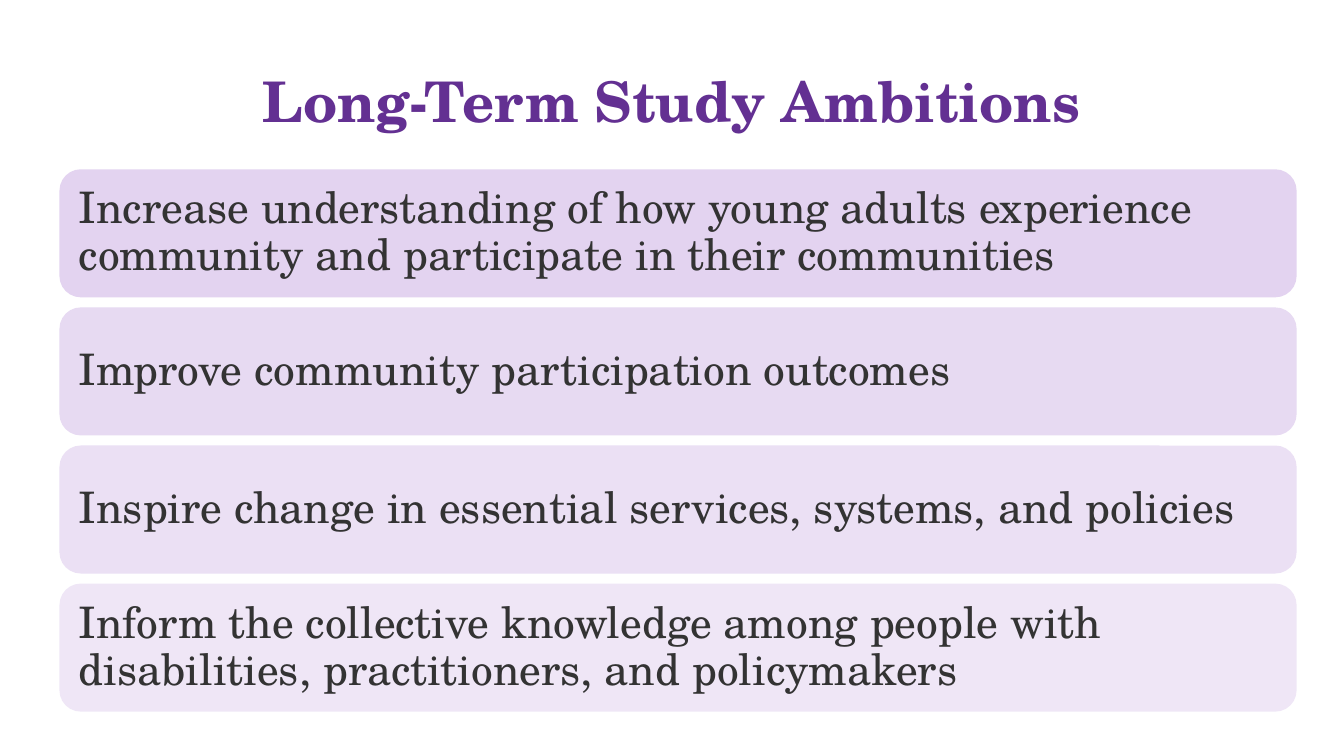
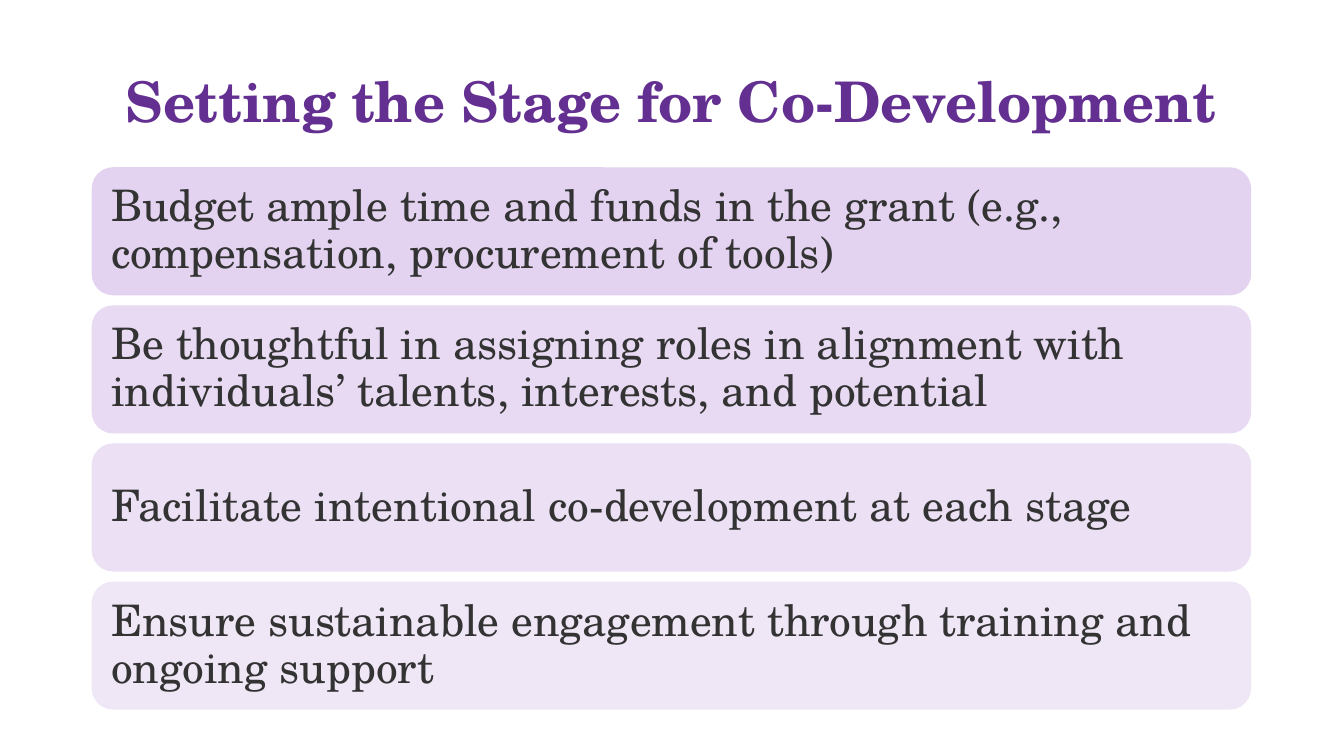
from lxml import etree
from pptx import Presentation
from pptx.dml.color import RGBColor
from pptx.enum.shapes import MSO_SHAPE
from pptx.enum.text import MSO_ANCHOR, PP_ALIGN
from pptx.oxml.ns import qn
from pptx.util import Inches, Pt

ROUNDED = MSO_SHAPE.ROUNDED_RECTANGLE
MIDDLE = MSO_ANCHOR.MIDDLE
CENTER, LEFT = PP_ALIGN.CENTER, PP_ALIGN.LEFT

FONT = "TeX Gyre Schola"
PURPLE, LILAC, CHARCOAL = "633092", "E0CFEF", "333333"
TITLE_FORMAT = {"name": FONT, "size": Pt(40), "bold": True}
PANEL_FORMAT = {"name": FONT, "size": Pt(31), "bold": False}
PANEL_HEIGHT, PANEL_PITCH, PANEL_INSET = 1.27, 1.37, 0.13
FIRST_OPACITY, LAST_OPACITY = 90, 50

SLIDES = [
    {
        "title": "Long-Term Study Ambitions",
        "left": 0.59, "top": 1.68, "width": 12.27,
        "points": [
            "Increase understanding of how young adults experience community and participate in their communities",
            "Improve community participation outcomes",
            "Inspire change in essential services, systems, and policies",
            "Inform the collective knowledge among people with disabilities, practitioners, and policymakers",
        ],
    },
    {
        "title": "Setting the Stage for Co-Development",
        "left": 0.91, "top": 1.66, "width": 11.5,
        "points": [
            "Budget ample time and funds in the grant (e.g., compensation, procurement of tools)",
            "Be thoughtful in assigning roles in alignment with individuals’ talents, interests, and potential",
            "Facilitate intentional co-development at each stage",
            "Ensure sustainable engagement through training and ongoing support",
        ],
    },
]


def rgb(value):
    """Turn a hex string into a colour."""
    return RGBColor.from_string(value)


def write(frame, wording, font_format, color, alignment):
    """Write one vertically centred paragraph into a text frame."""
    frame.word_wrap = True
    frame.vertical_anchor = MIDDLE
    paragraph = frame.paragraphs[0]
    paragraph.alignment = alignment
    paragraph.line_spacing = 0.9
    run = paragraph.add_run()
    run.text = wording
    for attribute, value in font_format.items():
        setattr(run.font, attribute, value)
    run.font.color.rgb = rgb(color)


def fill_translucent(shape, color, opacity):
    """Fill a shape with a colour at an opacity in percent."""
    shape.fill.solid()
    shape.fill.fore_color.rgb = rgb(color)
    color_element = shape.fill._xPr.find(qn("a:solidFill"))[0]
    etree.SubElement(color_element, qn("a:alpha"), val=str(opacity * 1000))


def add_title(slide, wording):
    """Add the centred slide title."""
    title = slide.shapes.add_textbox(Inches(0.91), Inches(0.42), Inches(11.5), Inches(1.24))
    write(title.text_frame, wording, TITLE_FORMAT, PURPLE, CENTER)


def add_panel(slide, left, top, width, wording, opacity):
    """Add a rounded panel holding one point."""
    panel = slide.shapes.add_shape(
        ROUNDED, Inches(left), Inches(top), Inches(width), Inches(PANEL_HEIGHT))
    panel.shadow.inherit = False
    panel.line.fill.background()
    fill_translucent(panel, LILAC, opacity)
    for side in ("left", "top", "right", "bottom"):
        setattr(panel.text_frame, f"margin_{side}", Inches(PANEL_INSET))
    write(panel.text_frame, wording, PANEL_FORMAT, CHARCOAL, LEFT)


def add_panels(slide, left, top, width, points):
    """Stack the points in panels that fade downwards."""
    fade = (FIRST_OPACITY - LAST_OPACITY) / (len(points) - 1)
    for row, point in enumerate(points):
        add_panel(slide, left, top + row * PANEL_PITCH, width, point,
                  round(FIRST_OPACITY - row * fade))


def main():
    """Build and save the presentation."""
    deck = Presentation()
    deck.slide_width, deck.slide_height = Inches(13.33), Inches(7.5)
    blank = deck.slide_layouts[6]
    for content in SLIDES:
        slide = deck.slides.add_slide(blank)
        add_title(slide, content["title"])
        add_panels(slide, content["left"], content["top"], content["width"], content["points"])
    deck.save("out.pptx")


if __name__ == "__main__":
    main()
